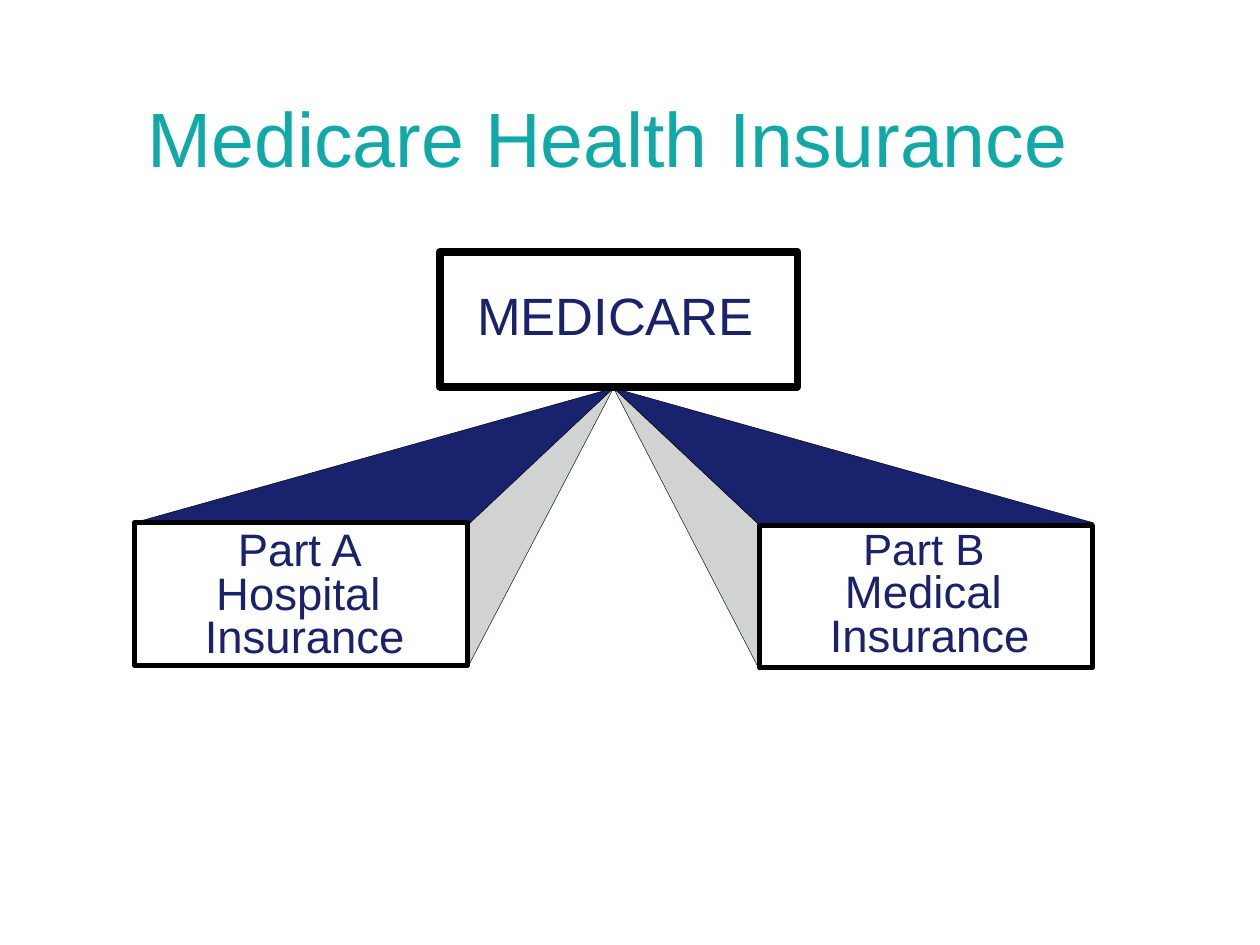
from pptx import Presentation
from pptx.dml.color import RGBColor
from pptx.enum.shapes import MSO_SHAPE as Shape
from pptx.enum.text import MSO_ANCHOR as Anchor, PP_ALIGN as Align
from pptx.util import Inches, Pt

HUES = {"teal": "11A8A8", "navy": "19226D", "gray": "D1D3D3",
        "white": "FFFFFF", "black": "000000"}
TITLE = "Medicare Health Insurance"
ROOT = [("MEDICARE", 30)]
PARTS = [
    {"lines": [("Part A ", 26), ("Hospital ", 26), ("Insurance", 26)],
     "side": -1, "top": 4.15},
    {"lines": [("Part B ", 25), ("Medical ", 26), ("Insurance", 26)],
     "side": 1, "top": 4.17},
]
APEX = (4.87, 3.08)
NEAR, FAR = 1.16, 3.81
WIDE, TALL = 2.64, 1.13


def hue(name):
    return RGBColor.from_string(HUES[name])


def paint(shape, fill, width):
    shape.shadow.inherit = False
    shape.fill.solid()
    shape.fill.fore_color.rgb = hue(fill)
    shape.line.color.rgb = hue("black")
    shape.line.width = Pt(width)


def face(slide, points, fill):
    spots = [(Inches(x), Inches(y)) for x, y in points]
    pen = slide.shapes.build_freeform(*spots[0], scale=1.0)
    pen.add_line_segments(spots[1:], close=True)
    paint(pen.convert_to_shape(), fill, 0.25)


def box(slide, area, width):
    rect = slide.shapes.add_shape(Shape.RECTANGLE, *map(Inches, area))
    paint(rect, "white", width)


def label(slide, area, lines, space=1.0, top=0.05):
    frame = slide.shapes.add_textbox(*map(Inches, area)).text_frame
    frame.word_wrap = True
    frame.margin_left = frame.margin_right = frame.margin_bottom = Inches(0.05)
    frame.margin_top = Inches(top)
    for i, (text, size) in enumerate(lines):
        para = frame.add_paragraph() if i else frame.paragraphs[0]
        para.text = text
        para.alignment = Align.CENTER
        para.line_spacing = space
        style(para.font, size, "navy")


def style(font, size, color):
    font.name = "Arial"
    font.size = Pt(size)
    font.color.rgb = hue(color)


def head(slide):
    title = slide.shapes.title
    title.left, title.top, title.width, title.height = map(
        Inches, (0.62, 0.75, 8.75, 0.75))
    frame = title.text_frame
    frame.text = TITLE
    frame.vertical_anchor = Anchor.BOTTOM
    frame.margin_right = Inches(0.44)
    para = frame.paragraphs[0]
    para.alignment = Align.CENTER
    style(para.font, 44, "teal")


def branch(slide, part):
    side, top = part["side"], part["top"]
    near, far = APEX[0] + side * NEAR, APEX[0] + side * FAR
    face(slide, [(near, top), APEX, (near, top + 1.15)], "gray")
    face(slide, [(far, 4.15), APEX, (near, 4.17)], "navy")
    left = near if side > 0 else near - WIDE
    box(slide, (left, top, WIDE, TALL), 3)
    label(slide, (left - 0.3, 4.17, 3.3, 1.83), part["lines"], 0.8)


def main():
    deck = Presentation()
    deck.slide_width, deck.slide_height = Inches(10), Inches(7.5)
    slide = deck.slides.add_slide(deck.slide_layouts[5])
    head(slide)
    for part in PARTS:
        branch(slide, part)
    box(slide, (3.49, 2, 2.84, 1.07), 4.5)
    label(slide, (3.49, 2, 2.79, 1.22), ROOT, top=0.25)
    deck.save("out.pptx")


if __name__ == "__main__":
    main()
